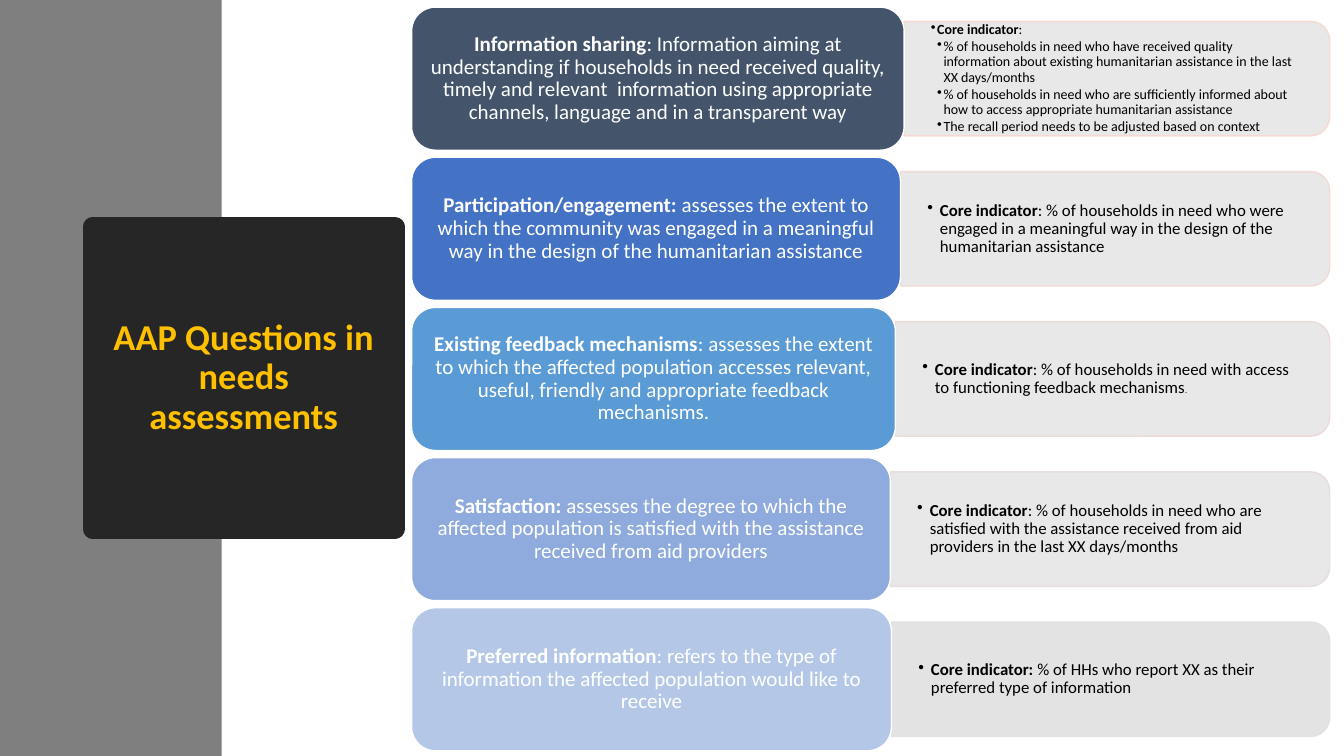
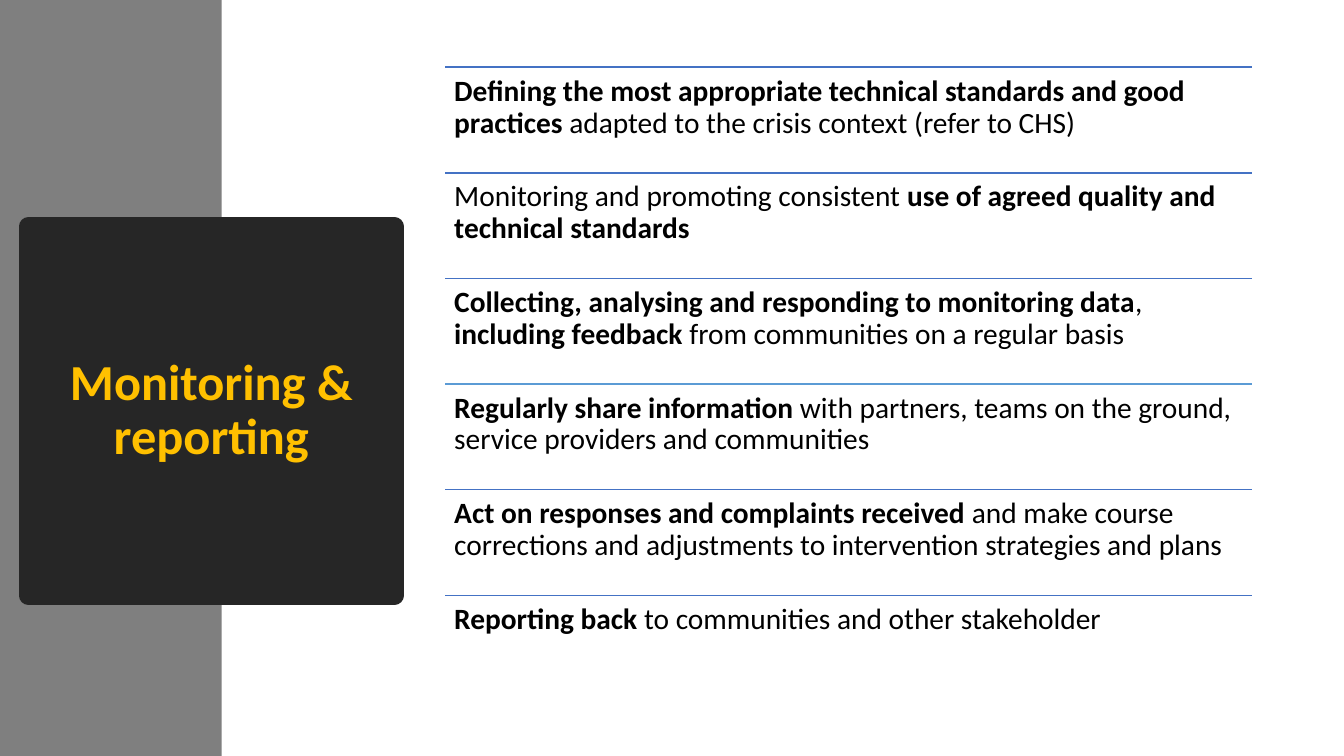
from lxml.etree import SubElement
from pptx import Presentation
from pptx.dml.color import RGBColor
from pptx.enum.shapes import MSO_CONNECTOR, MSO_SHAPE
from pptx.enum.text import MSO_ANCHOR, PP_ALIGN
from pptx.oxml.ns import qn
from pptx.util import Pt

HUES = {
    "band": "7F7F7F", "dark": "262626", "gold": "FFC000",
    "white": "FFFFFF", "black": "000000",
    "slate": "44546A", "blue": "4472C4", "sky": "5B9BD5",
    "mist": "8FAADC", "pale": "B4C7E7",
    "grey": "E7E6E6", "ash": "E1E1E1",
    "rose": "F8D7CE", "blush": "F2D8D2", "dusk": "EDD9D7", "mauve": "E7DCDC",
}


def rgb(name):
    return RGBColor.from_string(HUES[name])


def fade(fill, part):
    """Set the opacity of a solid fill element, in percent."""
    hue = fill.find(".//" + qn("a:srgbClr"))
    SubElement(hue, qn("a:alpha"), val=str(part * 1000))


def write(frame, lines, size=12, color="black", align=PP_ALIGN.LEFT,
          anchor=MSO_ANCHOR.MIDDLE, pad=(7.2, 3.6), after=0, dents=(), dot=""):
    """Fill a frame; *stars* mark bold, dents give bullet (margin, hang)
    for each line, and dot is a small closing mark."""
    frame.word_wrap = True
    frame.vertical_anchor = anchor
    frame.margin_left = frame.margin_right = Pt(pad[0])
    frame.margin_top = frame.margin_bottom = Pt(pad[1])
    for i, line in enumerate(lines):
        par = frame.paragraphs[0] if i == 0 else frame.add_paragraph()
        par.alignment = align
        par.line_spacing = 0.9
        par.space_after = Pt(after)
        if dents:
            props = par._p.get_or_add_pPr()
            props.set("marL", str(Pt(dents[i][0])))
            props.set("indent", str(-Pt(dents[i][1])))
            SubElement(props, qn("a:buChar"), char="•")
        parts = [(text, n % 2 == 1, size) for n, text in enumerate(line.split("*"))]
        for text, bold, points in parts + [(dot, False, size / 2)]:
            if text:
                run = par.add_run()
                run.text = text
                run.font.name = "Calibri"
                run.font.size = Pt(points)
                run.font.bold = bold
                run.font.color.rgb = rgb(color)


class Deck:
    def __init__(self):
        self.file = Presentation()
        self.file.slide_width, self.file.slide_height = Pt(960), Pt(540)
        self.slide = None

    def page(self, title, box, size):
        """Start a slide with the side band and the title block."""
        self.slide = self.file.slides.add_slide(self.file.slide_layouts[6])
        self.shape(MSO_SHAPE.RECTANGLE, (0, 0, 158.4, 540), "band")
        block = self.shape(MSO_SHAPE.RECTANGLE, box, "dark", "dark", 13.75)
        SubElement(block.line._get_or_add_ln(), qn("a:round"))
        write(block.text_frame, [f"*{title}*"], size=size, color="gold",
              align=PP_ALIGN.CENTER)

    def shape(self, kind, box, fill, line=None, width=1):
        item = self.slide.shapes.add_shape(kind, *map(Pt, box))
        item.shadow.inherit = False
        item.fill.solid()
        item.fill.fore_color.rgb = rgb(fill)
        if line:
            item.line.color.rgb = rgb(line)
            item.line.width = Pt(width)
        else:
            item.line.fill.background()
        return item

    def text(self, box, lines, **style):
        item = self.slide.shapes.add_textbox(*map(Pt, box))
        write(item.text_frame, lines, **style)

    def card(self, box, line, fill):
        item = self.shape(MSO_SHAPE.ROUNDED_RECTANGLE, box, fill, "white")
        write(item.text_frame, [line], size=15, color="white",
              align=PP_ALIGN.CENTER, pad=(4.5, 2.25))

    def panel(self, box, fill, line):
        """Draw a sheer panel rounded on its right side only."""
        left, top, wide, high = box
        shift = (wide - high) / 2
        item = self.shape(MSO_SHAPE.ROUND_2_SAME_RECTANGLE,
                          (left + shift, top - shift, high, wide), fill, line)
        item.rotation = 90
        props = item._element.spPr
        fade(props.find(qn("a:solidFill")), 90)
        fade(props.find(qn("a:ln")), 90)

    def rule(self, left, top, wide, color):
        line = self.slide.shapes.add_connector(
            MSO_CONNECTOR.STRAIGHT, Pt(left), Pt(top), Pt(left + wide), Pt(top))
        line.line.color.rgb = rgb(color)
        line.line.width = Pt(1)
        SubElement(line._element.spPr, qn("a:effectLst"))

    def topics(self, rows):
        """Stack cards, each with its panel of indicators."""
        left, high, pitch = 294, 102.2, 107.25
        for i, (wide, fill, back, edge, line, notes, dot) in enumerate(rows):
            top, side = 5.1 + i * pitch, left + wide
            many = len(notes) > 1
            dents = [(4.5, 4.5)] + [(9, 4.5)] * 3 if many else [(9, 9)]
            self.panel((side, top + 10.2, 949.8 - side, high - 20.4), back, edge)
            self.text((side, top + 14.2, 945.6 - side, high - 28.4), notes,
                      size=10 if many else 12, pad=(19.2, 9.6), after=1.5,
                      dents=dents, dot=dot)
            self.card((left, top, wide, high), line, fill)

    def steps(self, rows):
        """List texts, each below a thin rule."""
        left, wide, pitch = 318.2, 576, 75.45
        for i, (color, line) in enumerate(rows):
            top = 48 + i * pitch
            self.rule(left, top, wide, color)
            self.text((left, top, wide, pitch), [line], size=21,
                      anchor=MSO_ANCHOR.TOP, pad=(6.3, 6.3))


TOPICS = [
    (351.8, "slate", "grey", "rose",
     "*Information sharing*: Information aiming at understanding if households in "
     "need received quality, timely and relevant  information using appropriate "
     "channels, language and in a transparent way",
     ["*Core indicator*:",
      "% of households in need who have received quality information about "
      "existing humanitarian assistance in the last XX days/months",
      "% of households in need who are sufficiently informed about how to access "
      "appropriate humanitarian assistance",
      "The recall period needs to be adjusted based on context"], ""),
    (349.2, "blue", "grey", "blush",
     "*Participation/engagement: *assesses the extent to which the community was "
     "engaged in a meaningful way in the design of the humanitarian assistance",
     ["*Core indicator*: % of households in need who were engaged in a meaningful "
      "way in the design of the humanitarian assistance"], ""),
    (345.6, "sky", "grey", "dusk",
     "*Existing feedback mechanisms*: assesses the extent to which the affected "
     "population accesses relevant, useful, friendly and appropriate feedback "
     "mechanisms.",
     ["*Core indicator*: % of households in need with access to functioning "
      "feedback mechanisms"], "."),
    (342, "mist", "grey", "mauve",
     "*Satisfaction: *assesses the degree to which the affected population is "
     "satisfied with the assistance received from aid providers",
     ["*Core indicator*: % of households in need who are satisfied with the "
      "assistance received from aid providers in the last XX days/months"], ""),
    (342.8, "pale", "ash", "ash",
     "*Preferred information*: refers to the type of information the affected "
     "population would like to receive",
     ["*Core indicator:* % of HHs who report XX as their preferred type of "
      "information"], ""),
]

STEPS = [
    ("blue", "*Defining the most appropriate technical standards and good practices "
             "*adapted to the crisis context (refer to CHS)"),
    ("blue", "Monitoring and promoting consistent *use of agreed quality and "
             "technical standards*"),
    ("blue", "*Collecting, analysing and responding to monitoring data*, "
             "*including feedback *from communities on a regular basis"),
    ("sky", "*Regularly share information *with partners, teams on the ground, "
            "service providers and communities"),
    ("blue", "*Act on responses and complaints received *and make course "
             "corrections and adjustments to intervention strategies and plans"),
    ("blue", "*Reporting back *to communities and other stakeholder"),
]


def main():
    deck = Deck()
    deck.page("AAP Questions in needs assessments", (66.2, 162, 216, 216), 26)
    deck.topics(TOPICS)
    deck.page("Monitoring & reporting", (20.2, 162, 261.5, 263.2), 36)
    deck.steps(STEPS)
    deck.file.save("out.pptx")


if __name__ == "__main__":
    main()
